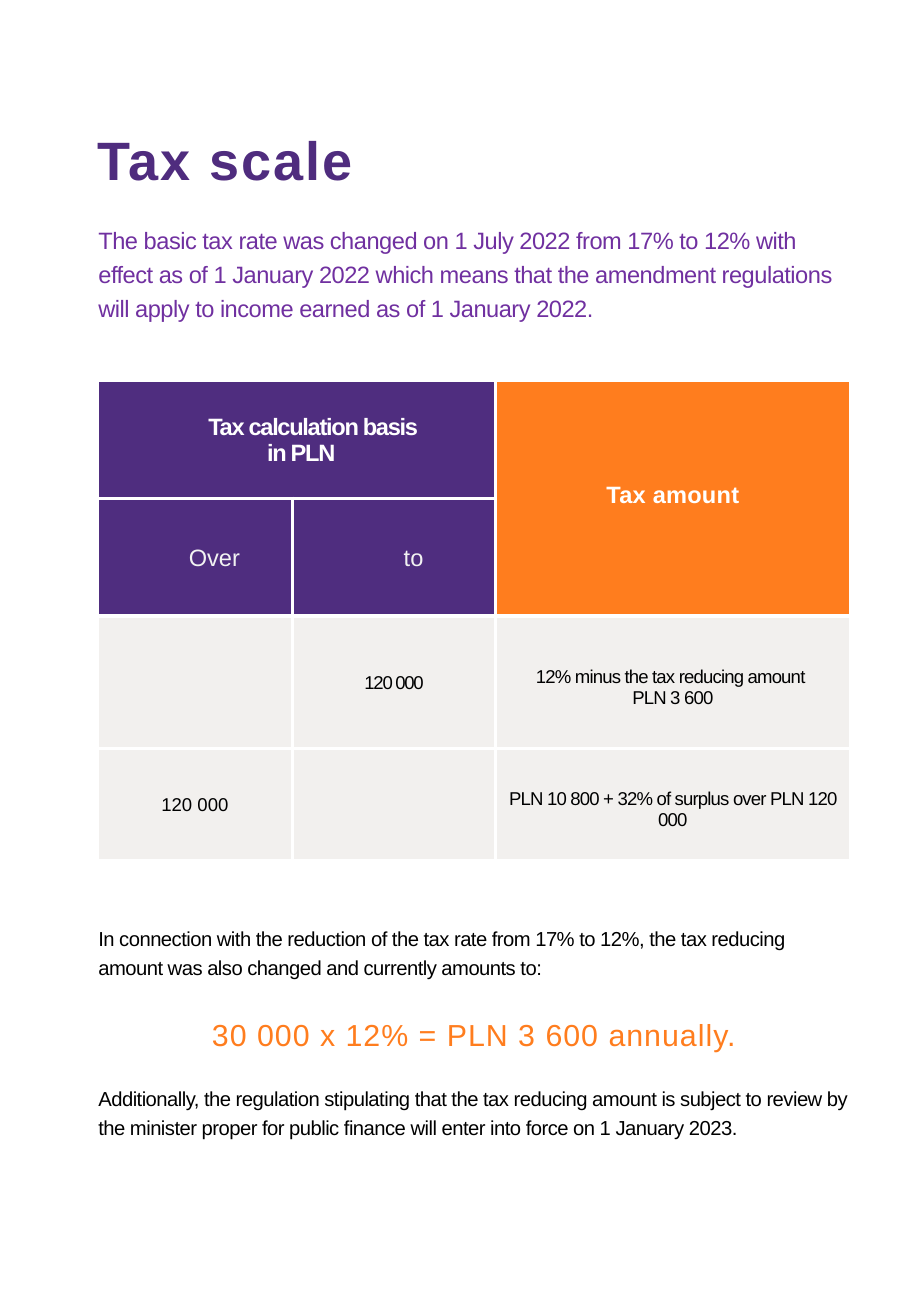
from pptx import Presentation
from pptx.dml.color import RGBColor
from pptx.enum.text import MSO_ANCHOR, MSO_AUTO_SIZE, PP_ALIGN
from pptx.oxml import parse_xml
from pptx.oxml.ns import nsdecls
from pptx.util import Emu, Pt

PIXEL = 9144
PURPLE, ORANGE, GREY = "4F2D7F", "FF7D1E", "F2F0EE"
WHITE, BLACK = "FFFFFF", "000000"


def px(length):
    return Emu(length * PIXEL)


def rgb(color):
    return RGBColor.from_string(color)


def style(paragraph, size, color, spacing=0, bold=False, align=PP_ALIGN.LEFT,
          before=0, after=0, line=1.0, left=0, indent=0):
    font = paragraph.font
    font.name, font.size, font.bold = "Arial", Pt(size), bold
    font.color.rgb = rgb(color)
    paragraph.alignment = align
    paragraph.space_before, paragraph.space_after = Pt(before), Pt(after)
    paragraph.line_spacing = line
    properties = paragraph._p.get_or_add_pPr()
    properties.set("marL", str(px(left)))
    properties.set("indent", str(px(indent)))
    properties.get_or_add_defRPr().set("spc", str(round(spacing * 100)))


def place(shape, box, top_margin):
    shape.left, shape.top, shape.width, shape.height = map(px, box)
    frame = shape.text_frame
    frame.word_wrap = True
    frame.auto_size = MSO_AUTO_SIZE.NONE
    frame.vertical_anchor = MSO_ANCHOR.TOP
    frame.margin_left = frame.margin_right = frame.margin_bottom = 0
    frame.margin_top = px(top_margin)
    return frame


def add_title(shape, box):
    frame = place(shape, box, 5)
    frame.text = "Tax scale"
    style(frame.paragraphs[0], 32, "4F2C7E", 1.2, bold=True)


def add_body(shape, box, entries):
    frame = place(shape, box, 1)
    frame.text = "\n".join(text for text, _ in entries)
    for paragraph, (_, options) in zip(frame.paragraphs, entries):
        style(paragraph, **{"line": 1.2, "before": 1, "left": 1, **options})
        paragraph._p.pPr.insert_element_before(
            parse_xml(f"<a:buNone {nsdecls('a')}/>"), "a:tabLst", "a:defRPr")


def add_borders(cell):
    properties = cell._tc.get_or_add_tcPr()
    for position, side in enumerate(("lnL", "lnR", "lnT", "lnB")):
        properties.insert(position, parse_xml(
            f'<a:{side} {nsdecls("a")} w="{Pt(2.25)}"><a:solidFill>'
            f'<a:srgbClr val="{WHITE}"/></a:solidFill></a:{side}>'))


def fill_cell(cell, text, margins, options):
    cell.text = text
    cell.vertical_anchor = MSO_ANCHOR.MIDDLE
    side, top = margins
    cell.margin_left = cell.margin_right = px(side)
    cell.margin_top, cell.margin_bottom = px(top), 0
    style(cell.text_frame.paragraphs[0], align=PP_ALIGN.CENTER, **options)


def add_tax_table(slide, box):
    columns, rows = (161, 167, 292), (97, 97, 109, 92)
    table = slide.shapes.add_table(len(rows), len(columns), *map(px, box)).table
    table.first_row = table.horz_banding = False
    for column, width in zip(table.columns, columns):
        column.width = px(width)
    for row, height in zip(table.rows, rows):
        row.height = px(height)
    for r in range(len(rows)):
        for c in range(len(columns)):
            cell = table.cell(r, c)
            cell.fill.solid()
            header = ORANGE if c == 2 else PURPLE
            cell.fill.fore_color.rgb = rgb(header if r < 2 else GREY)
            add_borders(cell)
    table.cell(0, 0).merge(table.cell(0, 1))
    table.cell(0, 2).merge(table.cell(1, 2))

    heading = {"size": 14, "before": 1.5, "left": 8, "indent": 24}
    value = {"size": 11, "color": BLACK}
    amount = {**value, "spacing": -0.5, "before": 6.5}
    contents = [
        (0, 0, "Tax calculation basis \vin PLN", (0, 2),
         {**heading, "color": WHITE, "bold": True, "spacing": -0.8}),
        (0, 2, "Tax amount", (7, 0),
         {"size": 14, "color": WHITE, "bold": True, "spacing": 0.1,
          "line": Pt(12), "after": 6}),
        (1, 0, "Over", (0, 2), {**heading, "color": "F2F2F2"}),
        (1, 1, "to", (0, 2), {**heading, "color": "F2F2F2"}),
        (2, 1, "120 000", (4, 1), {**value, "spacing": -0.8}),
        (2, 2, "12% minus the tax reducing amount \vPLN 3 600", (4, 9), amount),
        (3, 0, "120 000", (4, 1), {**value, "before": 0.4}),
        (3, 2, "PLN 10 800 + 32% of surplus over PLN 120 000", (4, 9), amount),
    ]
    for row, column, text, margins, options in contents:
        fill_cell(table.cell(row, column), text, margins, options)


def build_tax_slide(presentation):
    slide = presentation.slides.add_slide(presentation.slide_layouts[3])
    title, introduction, closing = slide.placeholders
    left, width = 80, 620
    add_title(title, (left, 99, width, 77))
    add_body(introduction, (left, 180, width, 113), [
        ("The basic tax rate was changed on 1 July 2022 from 17% to 12% with "
         "effect as of 1 January 2022 which means that the amendment regulations "
         "will apply to income earned as of 1 January 2022.",
         {"size": 14, "color": "7030A0", "spacing": -0.3}),
    ])
    add_tax_table(slide, (left, 313, width, 395))
    note = {"size": 12, "color": BLACK, "spacing": -0.3}
    gap = 17.2
    add_body(closing, (left, 757, width, 208), [
        ("In connection with the reduction of the tax rate from 17% to 12%, the "
         "tax reducing amount was also changed and currently amounts to:", note),
        ("30 000 x 12% = PLN 3 600 annually.",
         {"size": 18, "color": ORANGE, "spacing": 0.6,
          "align": PP_ALIGN.CENTER, "before": gap}),
        ("Additionally, the regulation stipulating that the tax reducing amount "
         "is subject to review by the minister proper for public finance will "
         "enter into force on 1 January 2023.", {**note, "before": gap}),
    ])


def main():
    presentation = Presentation()
    presentation.slide_width, presentation.slide_height = px(750), px(1083)
    build_tax_slide(presentation)
    presentation.save("out.pptx")


if __name__ == "__main__":
    main()
